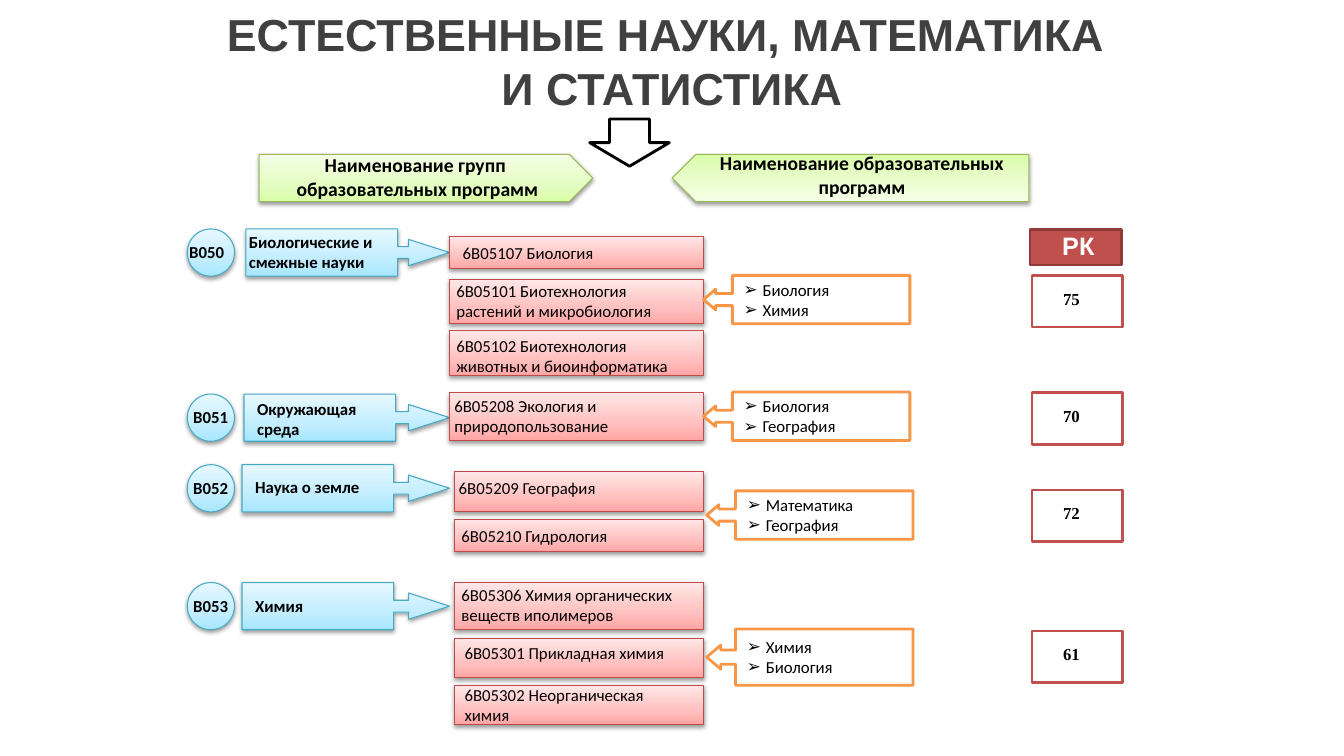
from copy import deepcopy

from lxml import etree
from pptx import Presentation
from pptx.dml.color import RGBColor
from pptx.enum.shapes import MSO_SHAPE
from pptx.enum.text import MSO_ANCHOR, MSO_AUTO_SIZE, PP_ALIGN
from pptx.oxml.ns import qn
from pptx.util import Cm, Pt

RECTANGLE, OVAL = MSO_SHAPE.RECTANGLE, MSO_SHAPE.OVAL
PENTAGON, DOWN_ARROW = MSO_SHAPE.PENTAGON, MSO_SHAPE.DOWN_ARROW
RIGHT_CALLOUT = MSO_SHAPE.RIGHT_ARROW_CALLOUT
LEFT_CALLOUT = MSO_SHAPE.LEFT_ARROW_CALLOUT
CENTER, LEFT, MIDDLE = PP_ALIGN.CENTER, PP_ALIGN.LEFT, MSO_ANCHOR.MIDDLE
GROW, FIXED = MSO_AUTO_SIZE.SHAPE_TO_FIT_TEXT, MSO_AUTO_SIZE.NONE

COLORS = {
    "title": "404040", "black": "000000", "white": "FFFFFF",
    "blue line": "46AAC5", "red line": "BF4C48", "green line": "98B955",
    "orange": "F79646", "score": "C0504D", "score dark": "8E3B39",
}
GRADIENTS = {
    "blue": ("A7E6FF", "C1EDFF", "E7F8FF"),
    "red": ("FFA6A5", "FFC0BF", "FFE7E7"),
    "green": ("DAFDA7", "E4FCC2", "F5FFE7"),
}
STOPS = (0, 0.35, 1)

# Text formats
BODY = {"name": "Calibri", "size": Pt(12), "bold": False, "color": "black"}
BOLD = {**BODY, "bold": True}
HEADING = {**BOLD, "size": Pt(14)}
SCORE = {**BOLD, "name": "Times New Roman"}
SCORE_HEADING = {**BOLD, "name": "Arial", "size": Pt(18), "color": "white"}
TITLE = {**BOLD, "name": "Arial", "size": Pt(32), "color": "title"}

# Columns and common sizes, in cm
CIRCLE_LEFT, CIRCLE_SIZE = 4.72, 1.19
CALLOUT_RIGHT, CALLOUT_BODY = 11.33, 3.82
PROGRAM_RIGHT = 17.73
SCORE_LEFT, SCORE_WIDTH, SCORE_HEIGHT = 26.01, 2.29, 1.3

# Tops inside a group count from its circle.
# name: text, left of callout, text offset; programs: text, top, height, text offset
GROUPS = [
    {"top": 5.77, "code": "B050", "code_shift": -0.2,
     "name": ("Биологические и\nсмежные науки", 6.2, (-0.18, -0.05)),
     "program_left": 11.33,
     "programs": [
         ("6В05107 Биология", 0.18, 0.81, (0.08, 0.03)),
         ("6В05101 Биотехнология\nрастений и микробиология", 1.27, 1.12, (-0.08, -0.1)),
         ("6В05102 Биотехнология\nживотных и биоинформатика", 2.57, 1.12, (-0.08, 0))],
     "exams": ("Биология\nХимия", 17.73, 1.17, 1.22), "score": ("75", 1.17)},
    {"top": 9.93, "code": "B051", "code_shift": -0.1,
     "name": ("Окружающая\nсреда", 6.15, (0.08, 0)),
     "program_left": 11.33,
     "programs": [
         ("6В05208 Экология и\nприродопользование", -0.03, 1.19, (-0.13, -0.05))],
     "exams": ("Биология\nГеография", 17.73, -0.05, 1.22), "score": ("70", -0.03)},
    {"top": 11.71, "code": "B052", "code_shift": -0.1,
     "name": ("Наука о земле", 6.1, (0.08, 0.18)),
     "program_left": 11.46,
     "programs": [
         ("6В05209 География", 0.18, 0.99, (-0.15, 0.03)),
         ("6В05210 Гидрология", 1.37, 0.81, (-0.08, 0.05))],
     "exams": ("Математика\nГеография", 17.81, 0.66, 1.22), "score": ("72", 0.64)},
    {"top": 14.68, "code": "B053", "code_shift": -0.1,
     "name": ("Химия", 6.1, (0.08, 0.2)),
     "program_left": 11.46,
     "programs": [
         ("6В05306 Химия органических\nвеществ иполимеров", 0, 1.19, (-0.08, -0.08)),
         ("6В05301 Прикладная химия", 1.4, 0.99, (0, 0)),
         ("6В05302 Неорганическая\nхимия", 2.59, 0.99, (0, -0.15))],
     "exams": ("Химия\nБиология", 17.81, 1.17, 1.42), "score": ("61", 1.22)},
]


def rgb(name):
    return RGBColor.from_string(COLORS[name])


def format_font(font, text_format):
    for key, value in text_format.items():
        if key == "color":
            font.color.rgb = rgb(value)
        else:
            setattr(font, key, value)


def add_shadow(shape):
    effects = shape._element.spPr.find(qn("a:effectLst"))
    shadow = etree.SubElement(effects, qn("a:outerShdw"), blurRad="40000",
                              dist="20000", dir="5400000", rotWithShape="0")
    color = etree.SubElement(shadow, qn("a:srgbClr"), val=COLORS["black"])
    etree.SubElement(color, qn("a:alpha"), val="38000")


def add_box(slide, kind, box, fill, line, width=2.0, adjustments=()):
    shape = slide.shapes.add_shape(kind, *map(Cm, box))
    shape.shadow.inherit = False
    for index, value in enumerate(adjustments):
        shape.adjustments[index] = value
    shape.line.color.rgb = rgb(line)
    shape.line.width = Pt(width)
    if fill in GRADIENTS:
        shape.fill.gradient()
        stop_list = shape._element.spPr.find(qn("a:gradFill")).find(qn("a:gsLst"))
        stop_list.append(deepcopy(stop_list[0]))
        for stop, position, color in zip(shape.fill.gradient_stops, STOPS, GRADIENTS[fill]):
            stop.position = position
            stop.color.rgb = RGBColor.from_string(color)
        shape.fill.gradient_angle = 90
        add_shadow(shape)
    else:
        shape.fill.solid()
        shape.fill.fore_color.rgb = rgb(fill)
    return shape


def add_label(slide, text, box, text_format=BODY, alignment=LEFT, bullet=None):
    label = slide.shapes.add_textbox(*map(Cm, box))
    frame = label.text_frame
    frame.word_wrap = True
    frame.auto_size = GROW
    frame.text = text
    for paragraph in frame.paragraphs:
        paragraph.alignment = alignment
        format_font(paragraph.runs[0].font, text_format)
        if bullet:
            properties = paragraph._p.get_or_add_pPr()
            properties.set("marL", str(Cm(0.48)))
            properties.set("indent", str(-Cm(0.48)))
            etree.SubElement(properties, qn("a:buFont"), typeface="Arial")
            etree.SubElement(properties, qn("a:buChar"), char=bullet)


def add_title(slide, box):
    title = slide.shapes.title
    for key, value in zip(("left", "top", "width", "height"), box):
        setattr(title, key, Cm(value))
    frame = title.text_frame
    frame.auto_size = FIXED
    frame.vertical_anchor = MIDDLE
    paragraph = frame.paragraphs[0]
    paragraph.alignment = CENTER
    paragraph.add_run().text = "ЕСТЕСТВЕННЫЕ НАУКИ, МАТЕМАТИКА "
    paragraph.add_line_break()
    paragraph.add_run().text = "И СТАТИСТИКА"
    for run in paragraph.runs:
        format_font(run.font, TITLE)


def add_headings(slide, left, top):
    # Column banners pointing at the arrow under the title
    add_box(slide, PENTAGON, (left, top, 8.41, 1.19), "green", "green line", 0.75)
    banner = add_box(slide, PENTAGON, (left + 10.41, top, 8.99, 1.19),
                     "green", "green line", 0.75)
    banner.rotation = 180
    add_label(slide, "Наименование групп \nобразовательных программ",
              (left + 0.2, top - 0.15, 7.59, 1.45), HEADING, CENTER)
    add_label(slide, "Наименование образовательных программ",
              (left + 10.8, top - 0.2, 8.79, 1.45), HEADING, CENTER)
    add_box(slide, DOWN_ARROW, (left + 8.33, top - 0.89, 2.01, 1.19), "white", "black")
    # Heading of the score column
    add_box(slide, RECTANGLE, (25.96, top + 1.9, 2.31, 0.89), "score", "score dark")
    add_label(slide, "РК", (26.52, top + 1.8, 1.96, 1.02), SCORE_HEADING)


def add_group(slide, left, group):
    top = group["top"]
    # Group code and name
    add_box(slide, OVAL, (left, top, CIRCLE_SIZE, CIRCLE_SIZE), "blue", "blue line", 0.75)
    add_label(slide, group["code"], (left + group["code_shift"], top + 0.2, 1.8, 0.76), BOLD)
    name, name_left, (shift, drop) = group["name"]
    width = CALLOUT_RIGHT - name_left
    add_box(slide, RIGHT_CALLOUT, (name_left, top, width, CIRCLE_SIZE), "blue", "blue line",
            0.75, (0.25, 0.278, 0.868, CALLOUT_BODY / width))
    add_label(slide, name, (name_left + shift, top + drop, 5.5, 0.76), BOLD)
    # Programs
    program_left = group["program_left"]
    for text, offset, height, (shift, drop) in group["programs"]:
        box = (program_left, top + offset, PROGRAM_RIGHT - program_left, height)
        add_box(slide, RECTANGLE, box, "red", "red line", 0.75)
        add_label(slide, text, (program_left + shift, top + offset + drop, 7, 0.76))
    # Entrance subjects
    text, exam_left, offset, height = group["exams"]
    add_box(slide, LEFT_CALLOUT, (exam_left, top + offset, 5.2, height), "white", "orange",
            adjustments=(0.25, 0.213, 0.25, 0.86))
    add_label(slide, text, (exam_left + 0.76, top + offset + (height - 1.27) / 2, 5.51, 1.27),
              bullet="➢")
    # Score
    text, offset = group["score"]
    add_box(slide, RECTANGLE, (SCORE_LEFT, top + offset, SCORE_WIDTH, SCORE_HEIGHT),
            "white", "score")
    add_label(slide, text, (SCORE_LEFT + 0.53, top + offset + 0.2, 2, 0.76), SCORE)


def main():
    presentation = Presentation()
    presentation.slide_width, presentation.slide_height = Cm(33.87), Cm(19.05)
    slide = presentation.slides.add_slide(presentation.slide_layouts[5])
    add_title(slide, (0, 0.05, 33.87, 2.97))
    add_headings(slide, 6.53, 3.89)
    for group in GROUPS:
        add_group(slide, CIRCLE_LEFT, group)
    presentation.save("out.pptx")


if __name__ == "__main__":
    main()
